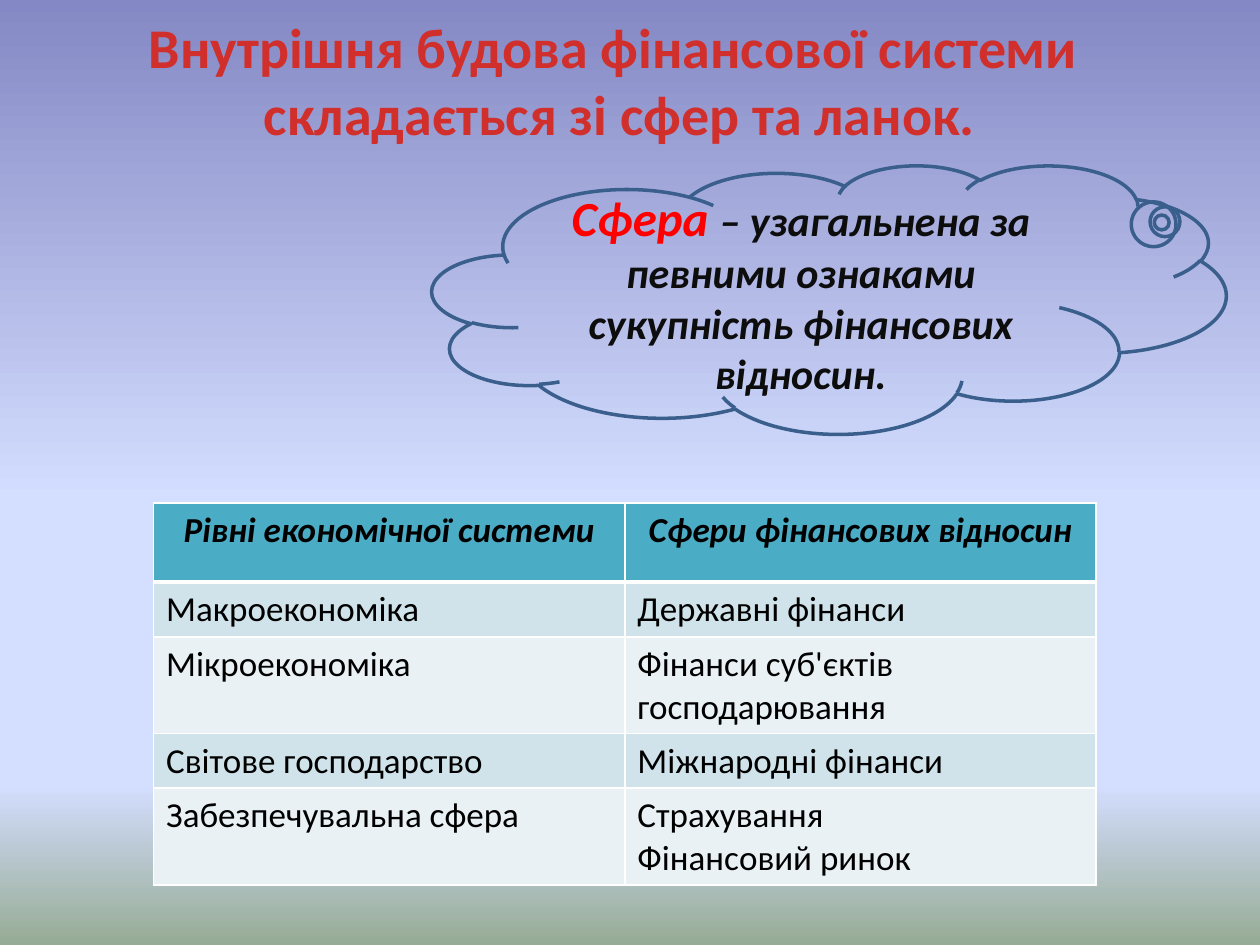
from dataclasses import dataclass

from lxml import etree
from pptx import Presentation
from pptx.dml.color import RGBColor
from pptx.enum import shapes, text
from pptx.oxml import ns
from pptx.util import Pt

BLACK = RGBColor(0, 0, 0)
INK = RGBColor(0x0D, 0x0D, 0x0D)
RED = RGBColor(0xFF, 0, 0)
WHITE = RGBColor(0xFF, 0xFF, 0xFF)
NAVY = RGBColor(0x3A, 0x5F, 0x8C)
TEAL = RGBColor(0x4B, 0xAC, 0xC6)
MIST = RGBColor(0xD0, 0xE3, 0xEA)
PALE = RGBColor(0xE9, 0xF1, 0xF5)
SKY = (
    (0, RGBColor(0x84, 0x88, 0xC4)),
    (53, RGBColor(0xD4, 0xDE, 0xFF)),
    (83, RGBColor(0xD4, 0xDE, 0xFF)),
    (100, RGBColor(0x96, 0xAB, 0x94)),
)
FLAME = (
    (0, RGBColor(0xFC, 0x7C, 0x7A)),
    (75, RGBColor(0xD0, 0x2F, 0x2C)),
    (100, RGBColor(0xC7, 0x05, 0x00)),
)
CENTER = text.PP_ALIGN.CENTER


@dataclass
class Box:
    left: float
    top: float
    width: float
    height: float

    def frame(self) -> list:
        return [Pt(v) for v in (self.left, self.top, self.width, self.height)]


@dataclass
class Row:
    cells: tuple
    fill: RGBColor
    height: float = 29.5
    head: bool = False


TITLE = ("Внутрішня будова фінансової системи ", "складається зі сфер та ланок.")
ROWS = (
    Row(("Рівні економічної системи", "Сфери фінансових відносин"), TEAL, 45.36, True),
    Row(("Макроекономіка", "Державні фінанси"), MIST),
    Row(("Мікроекономіка", "Фінанси суб'єктів господарювання"), PALE),
    Row(("Світове господарство", "Міжнародні фінанси"), MIST),
    Row(("Забезпечувальна сфера", "Страхування\nФінансовий ринок"), PALE),
)


def style(item, form: dict) -> None:
    for key, value in form.items():
        setattr(item, key, value)


def shade(root, fill, stops: tuple) -> None:
    fill.gradient()
    fill.gradient_angle = 270
    bag = root.xpath(".//a:gsLst")[0]
    for old in list(bag):
        bag.remove(old)
    for spot, color in stops:
        stop = etree.SubElement(bag, ns.qn("a:gs"), pos=str(spot * 1000))
        etree.SubElement(stop, ns.qn("a:srgbClr"), val=str(color))


def write(para, words: str, size: float, color=None, bold=False, italic=False):
    run = para.add_run()
    run.text = words
    style(run.font, dict(name="Calibri", size=Pt(size), bold=bold, italic=italic))
    if color is not None:
        run.font.color.rgb = color
    return run


def edge(cell, sides: dict) -> None:
    props = cell._tc.get_or_add_tcPr()
    for side, width in sides.items():
        line = etree.SubElement(props, ns.qn(f"a:ln{side}"), w=str(Pt(width)))
        fill = etree.SubElement(line, ns.qn("a:solidFill"))
        etree.SubElement(fill, ns.qn("a:srgbClr"), val=str(WHITE))


def add_title(slide, box: Box) -> None:
    title = slide.shapes.title
    style(title, dict(zip(("left", "top", "width", "height"), box.frame())))
    frame = title.text_frame
    style(frame, dict(word_wrap=True, auto_size=text.MSO_AUTO_SIZE.SHAPE_TO_FIT_TEXT,
                      vertical_anchor=text.MSO_ANCHOR.TOP))
    for n, words in enumerate(TITLE):
        para = frame.add_paragraph() if n else frame.paragraphs[0]
        para.alignment = CENTER
        run = write(para, words, 32, bold=True)
        shade(para._p.r_lst[-1], run.font.fill, FLAME)


def add_cloud(slide, box: Box) -> None:
    cloud = slide.shapes.add_shape(shapes.MSO_SHAPE.CLOUD_CALLOUT, *box.frame())
    cloud.adjustments[0], cloud.adjustments[1] = 0.419, -0.286
    cloud.shadow.inherit = False
    cloud.fill.background()
    cloud.line.color.rgb = NAVY
    cloud.line.width = Pt(2)
    frame = cloud.text_frame
    style(frame, dict(word_wrap=True, vertical_anchor=text.MSO_ANCHOR.MIDDLE))
    para = frame.paragraphs[0]
    para.alignment = CENTER
    write(para, "Сфера ", 28, RED, True, True)
    write(para, "– узагальнена за певними ознаками сукупність фінансових відносин.",
          24, INK, True, True)


def add_grid(slide, box: Box) -> None:
    grid = slide.shapes.add_table(len(ROWS), 2, *box.frame()).table
    for n, row in enumerate(ROWS):
        grid.rows[n].height = Pt(row.height)
        sides = dict(L=1, R=1, T=3 if n == 1 else 1, B=3 if row.head else 1)
        for cell, words in zip(grid.rows[n].cells, row.cells):
            edge(cell, sides)
            cell.fill.solid()
            cell.fill.fore_color.rgb = row.fill
            frame = cell.text_frame
            for k, line in enumerate(words.split("\n")):
                para = frame.add_paragraph() if k else frame.paragraphs[0]
                if row.head:
                    para.alignment = CENTER
                write(para, line, 20, BLACK, row.head, row.head)


def main() -> None:
    deck = Presentation()
    style(deck, dict(slide_width=Pt(720), slide_height=Pt(540)))
    slide = deck.slides.add_slide(deck.slide_layouts[5])
    shade(slide.element, slide.background.fill, SKY)
    add_title(slide, Box(36.7, 3.6, 635, 85))
    add_cloud(slide, Box(247, 94.3, 453.6, 153.4))
    add_grid(slide, Box(87.8, 287.3, 538.6, 218.2))
    deck.save("out.pptx")


if __name__ == "__main__":
    main()
